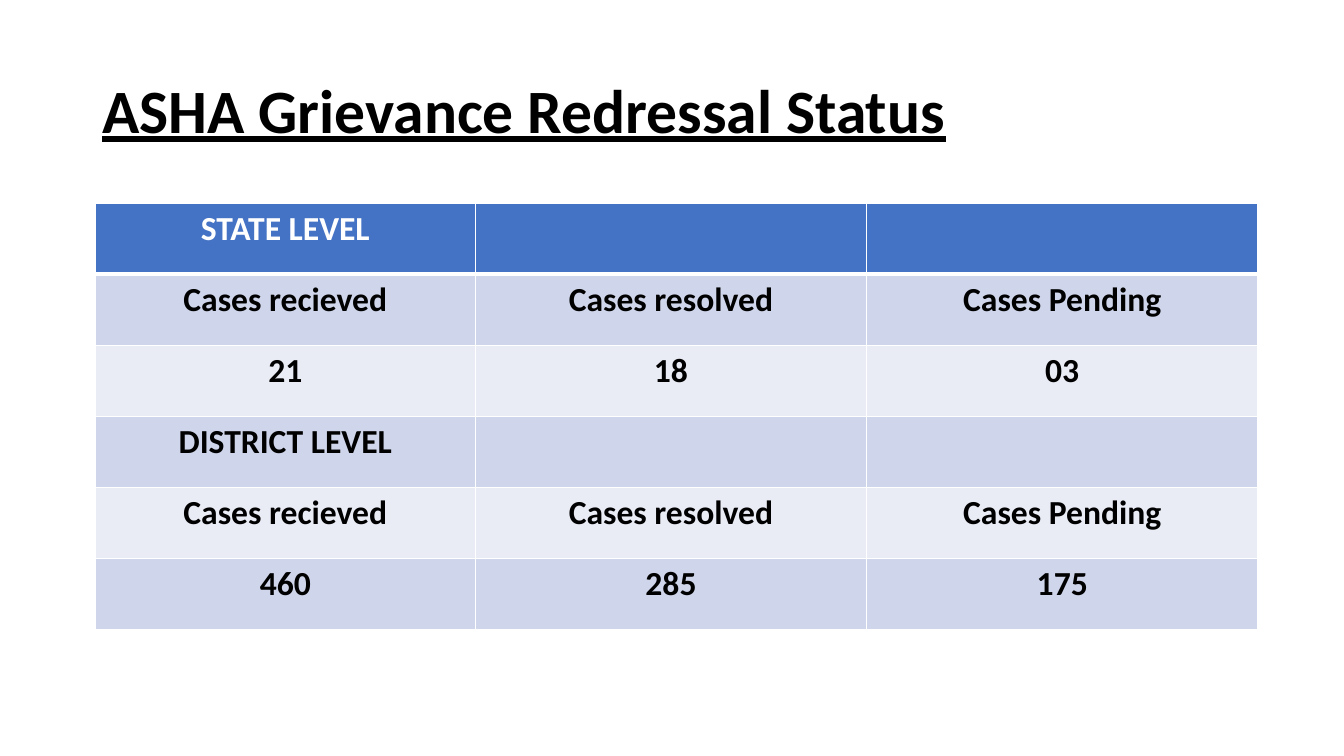
"""Build the ASHA grievance redressal status slide."""
from lxml.etree import SubElement
from pptx import Presentation
from pptx.dml.color import RGBColor
from pptx.enum.text import MSO_ANCHOR as Anchor, PP_ALIGN as Align
from pptx.oxml.ns import qn
from pptx.util import Cm, Pt

BLACK = RGBColor(0x00, 0x00, 0x00)
WHITE = RGBColor(0xFF, 0xFF, 0xFF)
HEADER_BLUE = RGBColor(0x44, 0x72, 0xC4)
BAND_DARK = RGBColor(0xCF, 0xD5, 0xEA)
BAND_LIGHT = RGBColor(0xE9, 0xEB, 0xF5)

ROWS = [
    ("STATE LEVEL", "", ""),
    ("Cases recieved", "Cases resolved", "Cases Pending"),
    ("21", "18", "03"),
    ("DISTRICT LEVEL", "", ""),
    ("Cases recieved", "Cases resolved", "Cases Pending"),
    ("460", "285", "175"),
]
COLUMN_WIDTHS = [Cm(9.58), Cm(9.86), Cm(9.86)]
ROW_HEIGHT = Cm(1.79)


def write(frame, text, size=24, color=BLACK, align=Align.CENTER, underline=None, spacing=None):
    """Put one bold Calibri paragraph into a text frame."""
    para = frame.paragraphs[0]
    para.alignment = align
    para.line_spacing = spacing
    span = para.add_run()
    span.text = text
    font = span.font
    font.name = "Calibri"
    font.size = Pt(size)
    font.bold = True
    font.underline = underline
    font.color.rgb = color


def add_border(cell, side, width):
    """Draw a white line along one side of a cell."""
    properties = cell._tc.get_or_add_tcPr()
    line = SubElement(properties, qn(f"a:{side}"), w=str(Pt(width)))
    fill = SubElement(line, qn("a:solidFill"))
    SubElement(fill, qn("a:srgbClr"), val=str(WHITE))


deck = Presentation()
deck.slide_width, deck.slide_height = Cm(33.87), Cm(19.05)
page = deck.slides.add_slide(deck.slide_layouts[6])

title = page.shapes.add_textbox(Cm(2.33), Cm(1.01), Cm(29.21), Cm(3.68))
title.text_frame.word_wrap = True
title.text_frame.vertical_anchor = Anchor.MIDDLE
write(title.text_frame, "ASHA Grievance Redressal Status", size=44,
      align=Align.LEFT, underline=True, spacing=0.9)

table = page.shapes.add_table(
    len(ROWS), len(COLUMN_WIDTHS), Cm(2.4), Cm(5.12),
    sum(COLUMN_WIDTHS), ROW_HEIGHT * len(ROWS)).table
for column, width in zip(table.columns, COLUMN_WIDTHS):
    column.width = width

for row_index, texts in enumerate(ROWS):
    table.rows[row_index].height = ROW_HEIGHT
    is_header = row_index == 0
    band = BAND_DARK if row_index % 2 else BAND_LIGHT
    for column_index, text in enumerate(texts):
        cell = table.cell(row_index, column_index)
        for side in ("lnL", "lnR", "lnT", "lnB"):
            below_header = (row_index, side) in ((0, "lnB"), (1, "lnT"))
            add_border(cell, side, 3 if below_header else 1)
        cell.fill.solid()
        cell.fill.fore_color.rgb = HEADER_BLUE if is_header else band
        if text:
            write(cell.text_frame, text, color=WHITE if is_header else BLACK)

deck.save("out.pptx")
